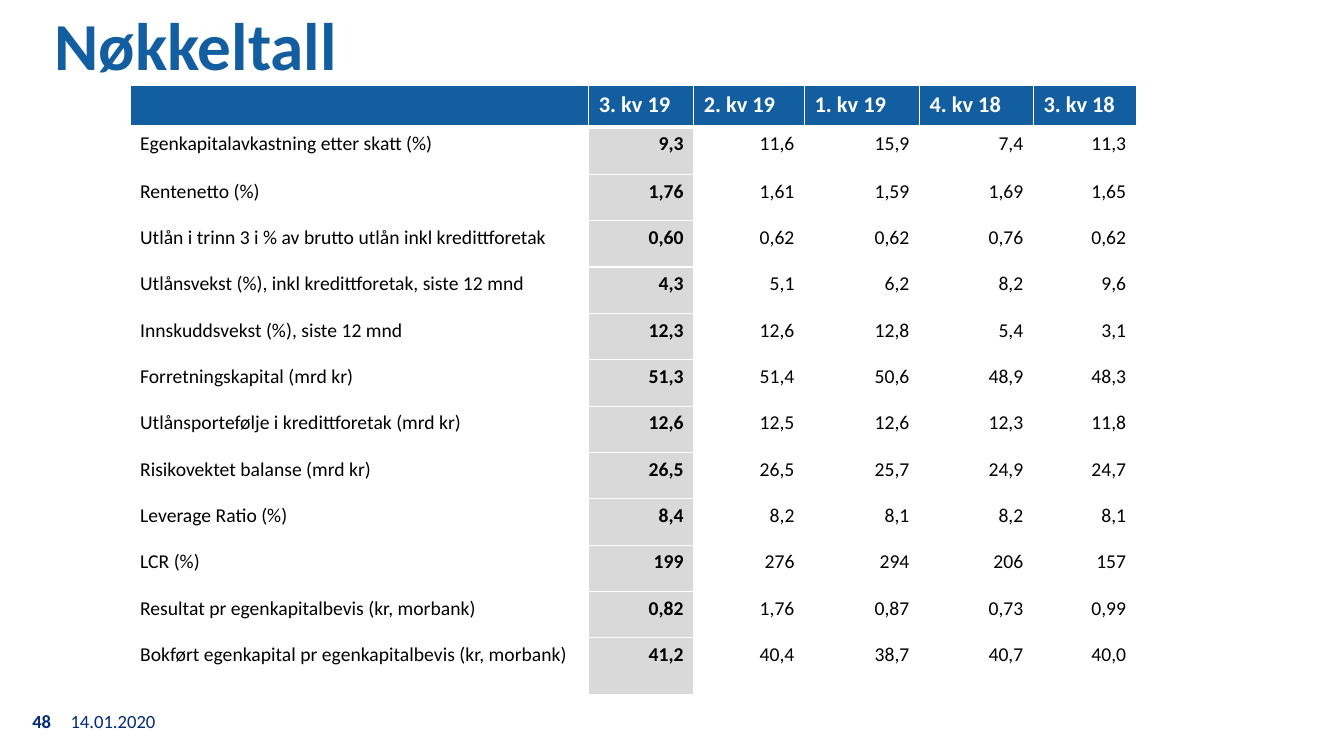
from lxml import etree
from pptx import Presentation
from pptx.dml.color import RGBColor
from pptx.enum import text
from pptx.oxml import ns
from pptx.util import Inches, Pt

BLUE = RGBColor(0x13, 0x5E, 0xA0)
NAVY = RGBColor(0x03, 0x2A, 0x74)
GREY = RGBColor(0xD9, 0xD9, 0xD9)
WHITE = RGBColor(0xFF, 0xFF, 0xFF)
BLACK = RGBColor(0, 0, 0)

# Content
TITLE = "Nøkkeltall"
FOOTER = [("14.01.2020", 0.7, 0.95, False), ("48", 0.32, 0.22, True)]
HEADER = ("", "3. kv 19", "2. kv 19", "1. kv 19", "4. kv 18", "3. kv 18")
KEY_FIGURES = [
    ("Egenkapitalavkastning etter skatt (%)", "9,3", "11,6", "15,9", "7,4", "11,3"),
    ("Rentenetto (%)", "1,76", "1,61", "1,59", "1,69", "1,65"),
    ("Utlån i trinn 3 i % av brutto utlån inkl kredittforetak",
     "0,60", "0,62", "0,62", "0,76", "0,62"),
    ("Utlånsvekst (%), inkl kredittforetak, siste 12 mnd", "4,3", "5,1", "6,2", "8,2", "9,6"),
    ("Innskuddsvekst (%), siste 12 mnd", "12,3", "12,6", "12,8", "5,4", "3,1"),
    ("Forretningskapital (mrd kr)", "51,3", "51,4", "50,6", "48,9", "48,3"),
    ("Utlånsportefølje i kredittforetak (mrd kr)", "12,6", "12,5", "12,6", "12,3", "11,8"),
    ("Risikovektet balanse (mrd kr)", "26,5", "26,5", "25,7", "24,9", "24,7"),
    ("Leverage Ratio (%)", "8,4", "8,2", "8,1", "8,2", "8,1"),
    ("LCR (%)", "199", "276", "294", "206", "157"),
    ("Resultat pr egenkapitalbevis (kr, morbank)", "0,82", "1,76", "0,87", "0,73", "0,99"),
    ("Bokført egenkapital pr egenkapitalbevis (kr, morbank)",
     "41,2", "40,4", "38,7", "40,7", "40,0"),
]
COLUMN_WIDTHS = (4.55, 1.04, 1.1, 1.14, 1.13, 1.02)
ROW_HEIGHTS = [0.41, 0.47] + [0.46] * (len(KEY_FIGURES) - 2) + [0.56]
CURRENT_QUARTER = 1


def write(frame, words, size, color, bold, align=text.PP_ALIGN.LEFT):
    paragraph = frame.paragraphs[0]
    paragraph.alignment = align
    run = paragraph.add_run()
    run.text = words
    for name, value in {"name": "Calibri", "size": Pt(size), "bold": bold}.items():
        setattr(run.font, name, value)
    run.font.color.rgb = color
    return paragraph


def format_frame(frame, **extra):
    values = dict.fromkeys(
        ("margin_left", "margin_top", "margin_right", "margin_bottom"), 0)
    values["auto_size"] = text.MSO_AUTO_SIZE.SHAPE_TO_FIT_TEXT
    for name, value in {**values, **extra}.items():
        setattr(frame, name, value)


def add_borders(cell, widths):
    properties = cell._tc.get_or_add_tcPr()
    for side, width in widths.items():
        line = etree.SubElement(properties, ns.qn(f"a:ln{side}"), w=str(Pt(width)))
        fill = etree.SubElement(line, ns.qn("a:solidFill"))
        etree.SubElement(fill, ns.qn("a:srgbClr"), val=str(WHITE))


def add_title(slide):
    title = slide.shapes.title
    title.left, title.top, title.width, title.height = map(Inches, (0.54, 0.18, 11.62, 0.66))
    format_frame(title.text_frame, vertical_anchor=text.MSO_ANCHOR.MIDDLE)
    write(title.text_frame, TITLE, 48, BLUE, True).line_spacing = 0.8


def add_footer(slide):
    for words, left, width, bold in FOOTER:
        box = slide.shapes.add_textbox(*map(Inches, (left, 7.04, width, 0.22)))
        format_frame(box.text_frame, word_wrap=True)
        write(box.text_frame, words, 13.3, NAVY, bold)


def add_key_figures(slide):
    rows = [HEADER] + KEY_FIGURES
    table = slide.shapes.add_table(
        len(rows), len(HEADER), Inches(1.29), Inches(0.85),
        Inches(sum(COLUMN_WIDTHS)), Inches(sum(ROW_HEIGHTS))).table
    for column, width in zip(table.columns, COLUMN_WIDTHS):
        column.width = Inches(width)
    for row, height in zip(table.rows, ROW_HEIGHTS):
        row.height = Inches(height)

    for r, values in enumerate(rows):
        for c, value in enumerate(values):
            cell = table.cell(r, c)
            current = c == CURRENT_QUARTER
            header = r == 0
            add_borders(cell, {"L": 1, "R": 1, "T": 3 if r == 1 else 1, "B": 3 if header else 1})
            cell.fill.solid()
            cell.fill.fore_color.rgb = BLUE if header else GREY if current else WHITE
            if header and value:
                write(cell.text_frame, value, 16, WHITE, True)
            elif value:
                align = text.PP_ALIGN.RIGHT if c else text.PP_ALIGN.LEFT
                write(cell.text_frame, value, 14, BLACK, current, align)


def main():
    presentation = Presentation()
    presentation.slide_width, presentation.slide_height = Inches(13.33), Inches(7.5)
    slide = presentation.slides.add_slide(presentation.slide_layouts[5])
    add_title(slide)
    add_footer(slide)
    add_key_figures(slide)
    presentation.save("out.pptx")


if __name__ == "__main__":
    main()
